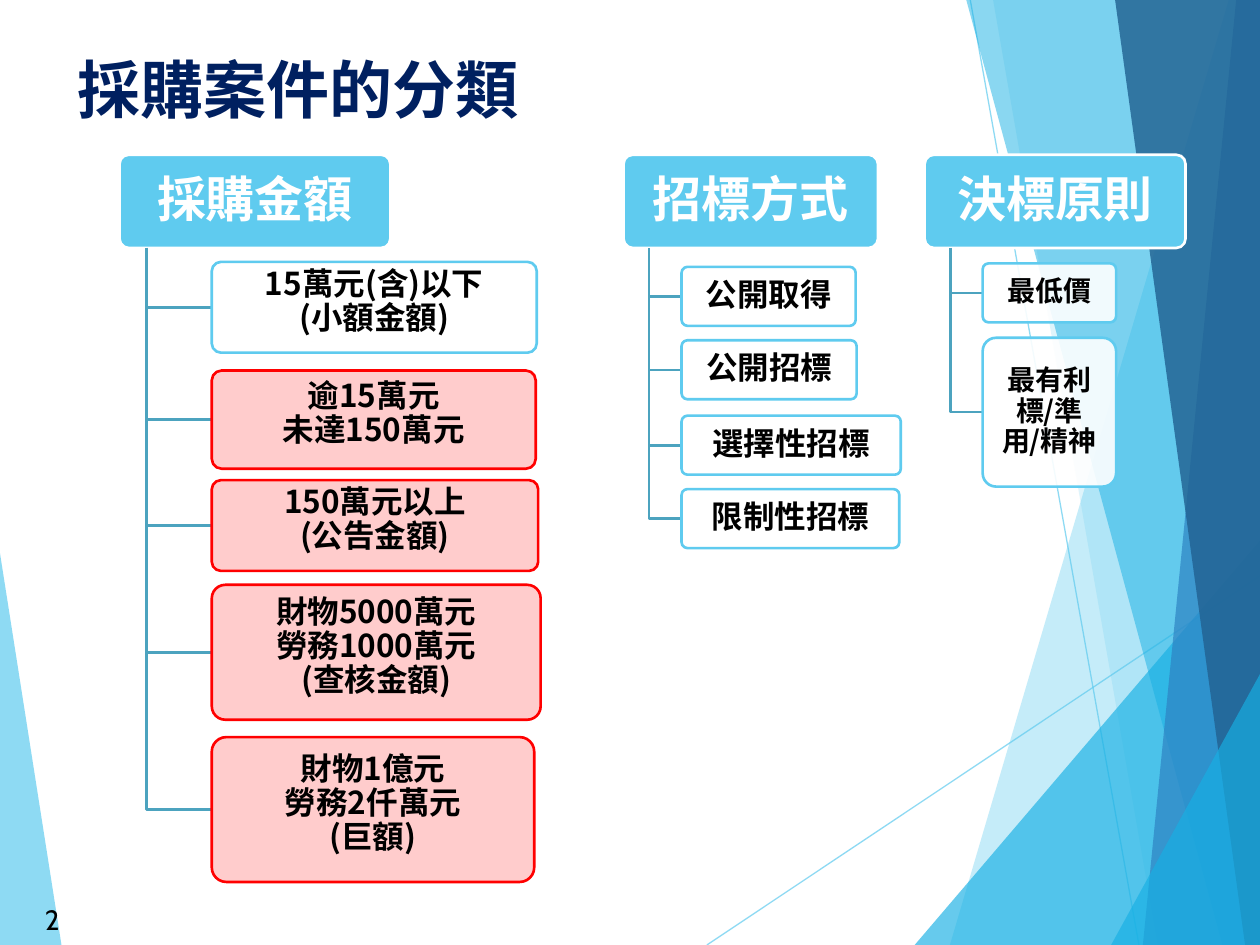
"""Build the slide that classifies procurement cases by amount, tendering and award."""
from lxml import etree
from pptx import Presentation
from pptx.dml.color import RGBColor
from pptx.enum import shapes, text
from pptx.oxml import ns
from pptx.util import Cm, Pt

WHITE = RGBColor(0xFF, 0xFF, 0xFF)
BLACK = RGBColor(0x00, 0x00, 0x00)
NAVY = RGBColor(0x00, 0x20, 0x60)
SKY = RGBColor(0x5F, 0xCB, 0xEF)
CYAN = RGBColor(0x17, 0xB0, 0xE4)
BLUE = RGBColor(0x2E, 0x83, 0xC3)
DEEP = RGBColor(0x22, 0x62, 0x92)
BRANCH = RGBColor(0x4C, 0xA3, 0xBF)
RED = RGBColor(0xFF, 0x00, 0x00)

CJK_FONT = "Noto Sans CJK SC"
WIDTH, HEIGHT = 25.4, 19.05
HEADER_TOP, HEADER_HEIGHT = 3.12, 1.88

LEFT_WEDGE = ([(0, 11.15), (1.24, HEIGHT), (0, HEIGHT)], SKY, 70)
RAYS = [
    ((14.25, HEIGHT), (WIDTH, 11.61)),
    ((19.56, 0), (22.96, HEIGHT)),
]
RIGHT_CORNERS = [(WIDTH, HEIGHT), (WIDTH, 0)]
RIGHT_FACETS = [
    ([(24.77, 0), (19.15, HEIGHT)] + RIGHT_CORNERS, SKY, 36),
    ([(20.02, 0), (23.34, HEIGHT)] + RIGHT_CORNERS, SKY, 20),
    ([(18.44, HEIGHT), (WIDTH, 10.9), (WIDTH, HEIGHT)], CYAN, 66),
    ([(19.48, 0), (24.64, HEIGHT)] + RIGHT_CORNERS, CYAN, 50),
    ([(24.92, 0), (23.04, HEIGHT)] + RIGHT_CORNERS, BLUE, 70),
    ([(22.48, 0), (25.1, HEIGHT)] + RIGHT_CORNERS, DEEP, 82),
    ([(22.4, HEIGHT), (WIDTH, 13.59), (WIDTH, HEIGHT)], CYAN, 66),
]

PLAIN = (WHITE, 90, SKY)
ALERT = (RED, 20, RED)
COLUMNS = [
    {"header": "採購金額", "left": 2.41, "width": 5.46, "item_left": 4.27,
     "size": 18, "spacing": Pt(13), "inset": (0.1, 0.07), "items": [
         ("15萬元(含)以下\n(小額金額)", 5.28, 6.55, 1.83, PLAIN),
         ("逾15萬元\n未達150萬元", 7.47, 6.53, 1.98, ALERT),
         ("150萬元以上\n(公告金額)", 9.68, 6.58, 1.83, ALERT),
         ("財物5000萬元\n勞務1000萬元\n(查核金額)", 11.79, 6.63, 2.72, ALERT),
         ("財物1億元\n勞務2仟萬元\n(巨額)", 14.86, 6.5, 2.92, ALERT)]},
    {"header": "招標方式", "left": 12.57, "width": 5.13, "item_left": 13.74,
     "size": 18, "spacing": 0.9, "inset": (0.1, 0.07), "items": [
         ("公開取得", 5.38, 3.51, 1.19, PLAIN),
         ("公開招標", 6.86, 3.53, 1.19, PLAIN),
         ("選擇性招標", 8.38, 4.42, 1.19, PLAIN),
         ("限制性招標", 9.86, 4.39, 1.19, PLAIN)]},
    {"header": "決標原則", "left": 18.64, "width": 5.26, "item_left": 19.81,
     "size": 16, "spacing": 0.9, "inset": (0.08, 0.05), "items": [
         ("最低價", 5.31, 2.69, 1.19, PLAIN),
         ("最有利標/準用/精神", 6.81, 2.69, 3, PLAIN)]},
]


def set_opacity(color_format, percent):
    for color in color_format._xPr.iter(ns.qn("a:srgbClr")):
        etree.SubElement(color, ns.qn("a:alpha")).set("val", str(percent * 1000))


def paint(shape, color, opacity=100):
    shape.shadow.inherit = False
    shape.fill.solid()
    shape.fill.fore_color.rgb = color
    if opacity < 100:
        set_opacity(shape.fill, opacity)


def trace(slide, points, close):
    start, *rest = [(Cm(x), Cm(y)) for x, y in points]
    builder = slide.shapes.build_freeform(*start, scale=1.0)
    builder.add_line_segments(rest, close=close)
    return builder.convert_to_shape()


def add_facet(slide, points, color, opacity):
    facet = trace(slide, points, True)
    paint(facet, color, opacity)
    facet.line.fill.background()


def add_ray(slide, start, end):
    ray = slide.shapes.add_connector(
        shapes.MSO_CONNECTOR.STRAIGHT, *[Cm(v) for v in start + end])
    ray.line.color.rgb = SKY
    ray.line.width = Pt(0.75)
    set_opacity(ray.line.fill, 70)
    etree.SubElement(ray._element.spPr, ns.qn("a:effectLst"))


def write(frame, words, size, color, font=CJK_FONT, bold=True,
          align=text.PP_ALIGN.CENTER, spacing=None, after=None):
    frame.word_wrap = True
    frame.text = words
    for paragraph in frame.paragraphs:
        paragraph.alignment = align
        paragraph.line_spacing = spacing
        paragraph.space_after = after
        for run in paragraph.runs:
            run.font.size = Pt(size)
            run.font.bold = bold
            run.font.name = font
            run.font.color.rgb = color
            east_asian = etree.SubElement(run.font._element, ns.qn("a:ea"))
            east_asian.set("typeface", font)


def add_card(slide, box, words, size, look, color, spacing, inset):
    fill, opacity, border = look
    card = slide.shapes.add_shape(
        shapes.MSO_SHAPE.ROUNDED_RECTANGLE, *[Cm(v) for v in box])
    card.adjustments[0] = 0.1
    paint(card, fill, opacity)
    card.line.color.rgb = border
    card.line.width = Pt(1.5)
    frame = card.text_frame
    frame.vertical_anchor = text.MSO_ANCHOR.MIDDLE
    frame.margin_left = frame.margin_right = Cm(inset[0])
    frame.margin_top = frame.margin_bottom = Cm(inset[1])
    write(frame, words, size, color, spacing=spacing, after=Pt(size * 0.35))


def add_column(slide, column):
    left, width, item_left = column["left"], column["width"], column["item_left"]
    add_card(slide, (left, HEADER_TOP, width, HEADER_HEIGHT), column["header"],
             28, (SKY, 100, WHITE), WHITE, 0.9, (0.15, 0.1))
    trunk = left + width / 10
    for words, top, item_width, height, look in column["items"]:
        middle = top + height / 2
        branch = trace(slide, [(trunk, HEADER_TOP + HEADER_HEIGHT),
                               (trunk, middle), (item_left, middle)], False)
        branch.shadow.inherit = False
        branch.fill.background()
        branch.line.color.rgb = BRANCH
        branch.line.width = Pt(1.5)
        add_card(slide, (item_left, top, item_width, height), words,
                 column["size"], look, BLACK, column["spacing"], column["inset"])


def main():
    deck = Presentation()
    deck.slide_width, deck.slide_height = Cm(WIDTH), Cm(HEIGHT)
    slide = deck.slides.add_slide(deck.slide_layouts[6])

    add_facet(slide, *LEFT_WEDGE)
    for start, end in RAYS:
        add_ray(slide, start, end)
    for facet in RIGHT_FACETS:
        add_facet(slide, *facet)

    title = slide.shapes.add_textbox(Cm(1.32), Cm(0.89), Cm(17.63), Cm(3.66))
    write(title.text_frame, "採購案件的分類", 36, NAVY, align=text.PP_ALIGN.LEFT)

    for column in COLUMNS:
        add_column(slide, column)

    number = slide.shapes.add_textbox(Cm(0.03), Cm(18.03), Cm(1.42), Cm(1.02))
    number.text_frame.vertical_anchor = text.MSO_ANCHOR.MIDDLE
    write(number.text_frame, "2", 16, BLACK, "Cabin", False, text.PP_ALIGN.RIGHT)

    deck.save("out.pptx")


if __name__ == "__main__":
    main()
